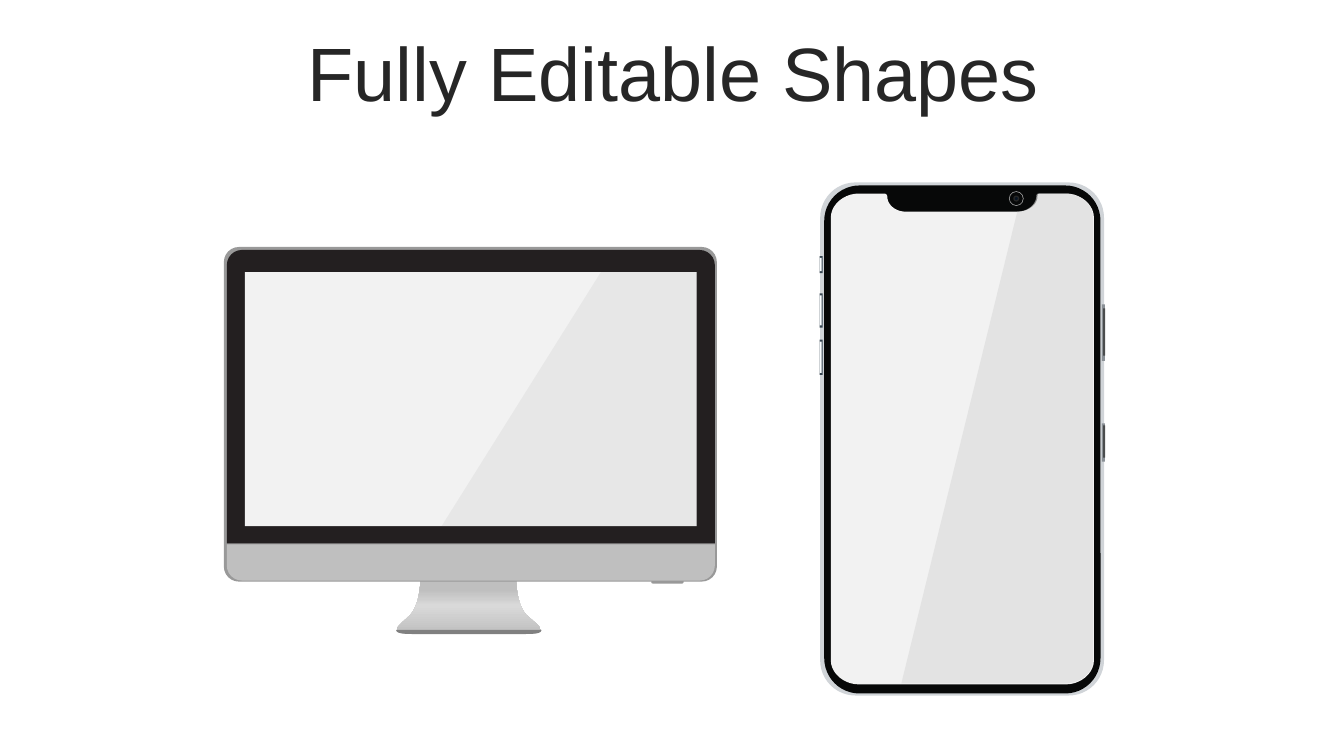
from dataclasses import dataclass
from lxml.etree import SubElement as Sub
from pptx import Presentation
from pptx.dml.color import RGBColor as Rgb
from pptx.enum.shapes import MSO_SHAPE as Kind
from pptx.enum.text import MSO_ANCHOR as Anchor, PP_ALIGN as Align
from pptx.oxml.ns import qn
from pptx.util import Emu, Inches, Pt

COLS, ROWS = 1333, 750
TITLE = "Fully Editable Shapes"
TITLE_BOX = (35, 36.5, 1266, 79)


@dataclass(frozen=True)
class Theme:
    font: str = "Arial"
    title: int = 54
    ink: str = "262626"
    rim: str = "999999"
    bezel: str = "231F20"
    chin: str = "BFBFBF"
    foot: str = "808080"
    screen: str = "F2F2F2"
    shine: str = "D9D9D9"
    case: str = "D0D4D8"
    black: str = "070808"
    slot: str = "364551"
    gap: str = "FAFDFF"
    key: str = "8A9096"
    core: str = "4A4C4D"
    ring: str = "A6A6A6"
    lens: str = "081422"


LOOK = Theme()
STEEL = ((0, LOOK.chin), (53, LOOK.shine), (83, LOOK.chin), (100, LOOK.chin))

RECT, OVAL = Kind.RECTANGLE, Kind.OVAL
ROUND, ENDS = Kind.ROUNDED_RECTANGLE, Kind.ROUND_2_SAME_RECTANGLE

STAND = [(522, 610), (512, 599, 512, 576, 512, 576), (417, 576),
         (417, 576, 417, 599, 407, 610), (397, 620, 381, 629, 409, 629),
         (521, 629), (549, 629, 533, 620, 522, 610)]
FOOT = [(393, 625), (393, 628, 398, 629, 409, 629), (521, 629),
        (533, 629, 537, 628, 537, 625)]
GLARE = [(596, 270), (691, 270), (691, 522), (438, 522)]

SCREEN = [(1057, 192), (1031, 192), (1030, 192, 1029, 193, 1029, 195),
          (1029, 203, 1020, 210, 1010, 210), (898, 210),
          (888, 210, 880, 203, 880, 195), (880, 193, 878, 192, 877, 192),
          (852, 192), (837, 192, 824, 203, 824, 216), (824, 655),
          (824, 668, 837, 679, 852, 679), (1057, 679),
          (1072, 679, 1085, 668, 1085, 655), (1085, 216),
          (1085, 203, 1072, 192, 1057, 192)]
SHEEN = [(1030, 192), (1056, 192), (1072, 192, 1084, 203, 1084, 216),
         (1084, 654), (1084, 668, 1072, 678, 1056, 678), (894, 678),
         (1009, 210), (1019, 210, 1028, 203, 1028, 194),
         (1028, 193, 1029, 192, 1030, 192)]

MONITOR = [
    (STAND, STEEL),
    ((222, 245, 489, 332), LOOK.rim, ROUND, 15),
    ((646, 576, 32, 3), LOOK.rim, ENDS, 0, 2),
    ((225, 248, 484, 291), LOOK.bezel, ENDS, 15, 0),
    (FOOT, LOOK.foot),
    ((225, 540, 484, 36), LOOK.chin, ENDS, 0, 15),
    ((243, 270, 448, 252), LOOK.screen, RECT),
    (GLARE, (LOOK.rim, 12)),
]

LEFT = (LOOK.slot, LOOK.gap)
RIGHT = (LOOK.key, LOOK.core)
KEYS = [
    ((813, 254, 3, 17), (813, 256, 2, 13), LEFT),
    ((813, 291, 3, 34), (813, 293, 2, 30), LEFT),
    ((813, 337, 3, 35), (813, 339, 2, 31), LEFT),
    ((1093, 302, 3, 56), (1094, 306, 2, 47), RIGHT),
    ((1093, 420, 3, 38), (1094, 422, 2, 32), RIGHT),
]
CAMERA = (1008, 197)
RINGS = [(14.5, LOOK.ring), (13, LOOK.black), (6, LOOK.ink), (3, LOOK.lens)]

PHONE = [
    ((813.5, 181, 281.5, 509), LOOK.case, ROUND, 35),
    ((817.5, 184, 274, 504), LOOK.black, ROUND, 35),
    (SCREEN, LOOK.screen),
    *((area, tone, RECT) for outer, inner, tones in KEYS
      for area, tone in zip((outer, inner), tones)),
    *(((CAMERA[0] - d / 2, CAMERA[1] - d / 2, d, d), tone, OVAL)
      for d, tone in RINGS),
    (SHEEN, (LOOK.shine, 60)),
]

deck = Presentation()
deck.slide_width, deck.slide_height = Inches(13.33), Inches(7.5)
UNIT = deck.slide_width / COLS


def grid(*cells):
    return [Emu(round(c * UNIT)) for c in cells]


def trace(route, steps=10):
    dots = [route[0]]
    for leg in route[1:]:
        if len(leg) == 2:
            dots.append(leg)
            continue
        ends = [dots[-1], leg[:2], leg[2:4], leg[4:]]
        for n in range(1, steps + 1):
            t = n / steps
            mix = ((1 - t) ** 3, 3 * t * (1 - t) ** 2, 3 * t * t * (1 - t), t ** 3)
            dots.append(tuple(sum(m * e[k] for m, e in zip(mix, ends))
                              for k in (0, 1)))
    return [grid(*dot) for dot in dots]


def paint(shape, fill):
    shape.shadow.inherit = False
    shape.line.fill.background()
    if fill is STEEL:
        shape.fill.gradient()
        shape.fill.gradient_angle = 90
        stops = shape.element.spPr.find(".//" + qn("a:gsLst"))
        for old in list(stops):
            stops.remove(old)
        for at, tone in fill:
            stop = Sub(stops, qn("a:gs"), pos=str(at * 1000))
            Sub(stop, qn("a:srgbClr"), val=tone)
        return
    tone, share = (fill, 100) if isinstance(fill, str) else fill
    shape.fill.solid()
    shape.fill.fore_color.rgb = Rgb.from_string(tone)
    if share < 100:
        hue = shape.element.spPr.find(".//" + qn("a:srgbClr"))
        Sub(hue, qn("a:alpha"), val=str(share * 1000))


def draw(group, form, fill, kind=None, *radii):
    if kind is None:
        dots = trace(form)
        pen = group.shapes.build_freeform(*dots[0], scale=1)
        pen.add_line_segments(dots[1:], close=True)
        shape = pen.convert_to_shape()
    else:
        shape = group.shapes.add_shape(kind, *grid(*form))
        for n, radius in enumerate(radii):
            shape.adjustments[n] = radius / min(form[2:])
    paint(shape, fill)


def write(slide, text, area, size, color, font, align):
    box = slide.shapes.add_textbox(*grid(*area))
    frame = box.text_frame
    frame.word_wrap = True
    frame.vertical_anchor = Anchor.MIDDLE
    para = frame.paragraphs[0]
    para.alignment = align
    para.line_spacing = 0.9
    para.space_before = Pt(10)
    run = para.add_run()
    run.text = text
    run.font.name, run.font.size = font, Pt(size)
    run.font.color.rgb = Rgb.from_string(color)


def main():
    slide = deck.slides.add_slide(deck.slide_layouts[6])
    write(slide, TITLE, TITLE_BOX, size=LOOK.title, color=LOOK.ink,
          font=LOOK.font, align=Align.CENTER)
    for parts in (MONITOR, PHONE):
        group = slide.shapes.add_group_shape()
        for part in parts:
            draw(group, *part)
    deck.save("out.pptx")


if __name__ == "__main__":
    main()
